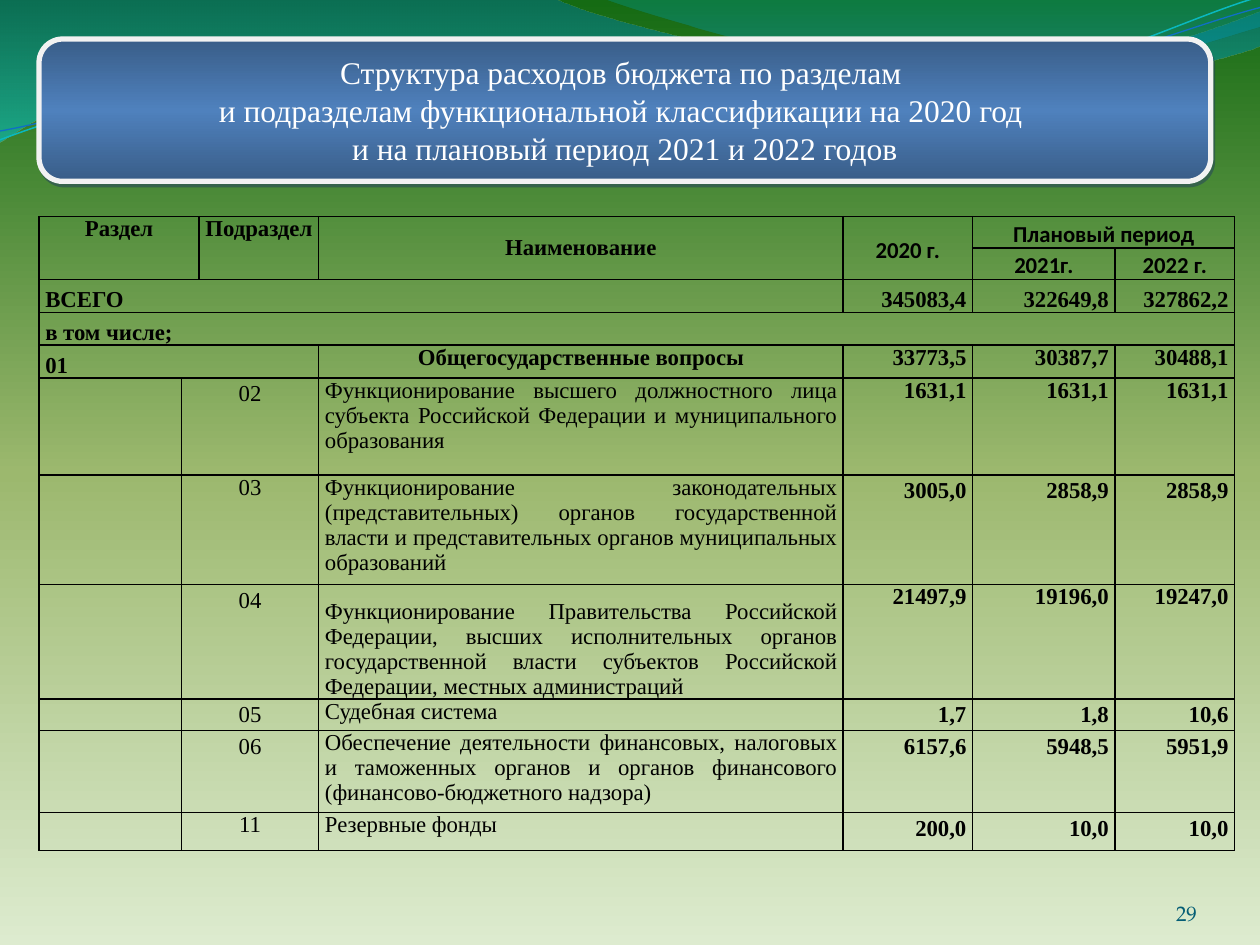
from lxml import etree
from pptx import Presentation
from pptx.dml.color import RGBColor
from pptx.enum.shapes import MSO_SHAPE
from pptx.enum.text import MSO_ANCHOR, PP_ALIGN
from pptx.oxml.ns import qn
from pptx.util import Inches, Pt

LEFT, CENTER, RIGHT, JUSTIFY = PP_ALIGN.LEFT, PP_ALIGN.CENTER, PP_ALIGN.RIGHT, PP_ALIGN.JUSTIFY
TOP, MIDDLE, BOTTOM = MSO_ANCHOR.TOP, MSO_ANCHOR.MIDDLE, MSO_ANCHOR.BOTTOM
PANEL = MSO_SHAPE.FLOWCHART_ALTERNATE_PROCESS
SERIF, SANS = "Times New Roman", "Calibri"

# Each wave: start point, then Bezier triples (six numbers) or line ends (two numbers)
BROAD_WAVE = [(0, -0.01), (4.4, -0.01), (4.76, 0.17, 6.64, 0.63, 7.58, 0.63),
              (8.53, 0.63, 9.58, 0.26, 10, 0.09), (10.01, 0.36),
              (9.83, 0.44, 8.7, 0.76, 7.46, 0.75), (6.22, 0.75, 3.82, 0.28, 2.57, 0.34),
              (1.29, 0.35, 0.46, 0.83, -0.01, 1.13), (0, -0.01)]
RIGHT_WAVE = [(4.79, -0.01), (5.09, 0.11, 6.82, 0.62, 7.69, 0.65),
              (8.56, 0.69, 9.61, 0.32, 10, 0.21), (10, 0), (4.79, -0.01)]
UPPER_LINE = [(0, 1.11), (0.48, 0.93, 1.58, 0.57, 2.77, 0.52),
              (3.95, 0.47, 5.93, 0.89, 7.13, 0.8), (8.33, 0.71, 9.38, 0.15, 9.98, -0.02)]
LOWER_LINE = [(0, 1.04), (0.47, 0.96, 1.64, 0.61, 2.83, 0.56),
              (4.03, 0.51, 5.97, 0.83, 7.17, 0.75), (8.36, 0.67, 9.41, 0.21, 10, 0.06)]

TITLE = ["Структура расходов бюджета по разделам ",
         "и подразделам функциональной классификации на 2020 год ",
         "и на плановый период 2021 и 2022 годов"]
COL_WIDTHS = [1.13, 0.11, 0.95, 4.16, 1.03, 1.13, 0.95]
ROW_HEIGHTS = [0.25, 0.25, 0.26, 0.26, 0.26, 0.77, 0.77, 0.91, 0.16, 0.56, 0.3]
MERGES = [(0, 0, 1, 1), (0, 2, 1, 2), (0, 3, 1, 3), (0, 4, 1, 4), (0, 5, 0, 6),
          (2, 0, 2, 3), (3, 0, 3, 6), (4, 0, 4, 2)] + [(r, 1, r, 2) for r in range(5, 11)]
# code, loose code, name, name alignment, name anchor, values, loose values
SUBSECTIONS = [
    ("02", True, "Функционирование высшего должностного лица субъекта Российской Федерации "
     "и муниципального образования", JUSTIFY, TOP, ("1631,1", "1631,1", "1631,1"), False),
    ("03", False, "Функционирование законодательных (представительных) органов государственной "
     "власти и представительных органов муниципальных образований",
     JUSTIFY, TOP, ("3005,0", "2858,9", "2858,9"), True),
    ("04", True, "Функционирование Правительства Российской Федерации, высших исполнительных "
     "органов государственной власти субъектов Российской Федерации, местных администраций",
     JUSTIFY, BOTTOM, ("21497,9", "19196,0", "19247,0"), False),
    ("05", True, "Судебная система", LEFT, TOP, ("1,7", "1,8", "10,6"), True),
    ("06", True, "Обеспечение деятельности финансовых, налоговых и таможенных органов и органов "
     "финансового (финансово-бюджетного надзора)",
     JUSTIFY, TOP, ("6157,6", "5948,5", "5951,9"), True),
    ("11", False, "Резервные фонды", JUSTIFY, TOP, ("200,0", "10,0", "10,0"), True),
]


def rgb(color):
    return RGBColor.from_string(color)


def set_gradient(fill, root, stops, angle):
    """Fill with (position, colour, {modifier: percent}) stops; the angle runs clockwise."""
    fill.gradient()
    grad = next(root.iter(qn("a:gradFill")))
    for child in list(grad):
        grad.remove(child)
    stop_list = etree.SubElement(grad, qn("a:gsLst"))
    for pos, color, modifiers in stops:
        gs = etree.SubElement(stop_list, qn("a:gs"), pos=str(pos * 1000))
        clr = etree.SubElement(gs, qn("a:srgbClr"), val=color)
        for name, percent in modifiers.items():
            etree.SubElement(clr, qn("a:" + name), val=str(int(percent * 1000)))
    etree.SubElement(grad, qn("a:lin"), ang=str(angle * 60000), scaled="0")


def format_runs(p, size, font, color, bold=False):
    for r in p.runs:
        r.font.size, r.font.name, r.font.bold = Pt(size), font, bold
        r.font.color.rgb = rgb(color)


def add_wave(slide, wave, closed):
    """Build an outline through all points, then join control points into curves."""
    points = [(Inches(seg[i]), Inches(seg[i + 1])) for seg in wave for i in range(0, len(seg), 2)]
    builder = slide.shapes.build_freeform(*points[0])
    builder.add_line_segments(points[1:], close=closed)
    sp = builder.convert_to_shape()
    sp.shadow.inherit = False
    lines = iter(list(sp.element.iter(qn("a:lnTo"))))
    for seg in wave[1:]:
        line = next(lines)
        if len(seg) == 6:
            line.addprevious(curve := etree.Element(qn("a:cubicBezTo")))
            for part in (line, next(lines), next(lines)):
                curve.append(part[0])
                part.getparent().remove(part)
    return sp


def add_backdrop(slide):
    set_gradient(slide.background.fill, slide.element,
                 [(0, "DDEBCF", {}), (50, "9CB86E", {}), (100, "156B13", {})], 270)
    for wave, stops in [
            (BROAD_WAVE, [(0, "0074A1", {"alpha": 45}), (100, "00C6CF", {"alpha": 55})]),
            (RIGHT_WAVE, [(0, "00A1A9", {"alpha": 30}), (80, "008BBF", {"alpha": 45})])]:
        sp = add_wave(slide, wave, True)
        set_gradient(sp.fill, sp.element, stops, 90)
        sp.line.fill.background()
    for wave, color, width in [(UPPER_LINE, "0AB8BF", 0.85), (LOWER_LINE, "0F6FC6", 0.75)]:
        sp = add_wave(slide, wave, False)
        sp.fill.background()
        sp.line.color.rgb, sp.line.width = rgb(color), Pt(width)


def add_title_panel(slide, left, top, width, height):
    sp = slide.shapes.add_shape(PANEL, left, top, width, height)
    dark = {"shade": 47.5}
    set_gradient(sp.fill, sp.element,
                 [(0, "4F81BD", dark), (50, "4F81BD", {}), (100, "4F81BD", dark)], 90)
    sp.line.color.rgb, sp.line.width = rgb("F2F2F2"), Pt(3)
    sp.shadow.inherit = False
    effects = next(sp.element.iter(qn("a:effectLst")))
    shadow = etree.SubElement(effects, qn("a:outerShdw"), blurRad="0", dist=str(Pt(2.2)),
                              dir=str(63 * 60000), algn="ctr", rotWithShape="0")
    clr = etree.SubElement(shadow, qn("a:srgbClr"), val="243F60")
    etree.SubElement(clr, qn("a:alpha"), val="50000")
    tf = sp.text_frame
    tf.text = "\n".join(TITLE)
    tf.word_wrap, tf.vertical_anchor = True, MIDDLE
    for p in tf.paragraphs:
        p.alignment = CENTER
        format_runs(p, 18, SERIF, "FFFFFF")


def style_cell(cell):
    """Clear the fill, draw thin black borders and keep empty text small."""
    cell.margin_left = cell.margin_right = Inches(0.05)
    cell.margin_top = cell.margin_bottom = 0
    cell.fill.background()
    props = cell._tc.get_or_add_tcPr()
    for i, side in enumerate(("lnL", "lnR", "lnT", "lnB")):
        ln = etree.Element(qn("a:" + side), w=str(Pt(1)))
        solid = etree.SubElement(ln, qn("a:solidFill"))
        etree.SubElement(solid, qn("a:srgbClr"), val="000000")
        props.insert(i, ln)
    p = cell.text_frame.paragraphs[0]
    if not p.runs:
        etree.SubElement(p._p, qn("a:endParaRPr"), sz="1300")


def write(cell, text, align=LEFT, anchor=TOP, loose=False, bold=True, font=SERIF):
    cell.text_frame.text = text
    cell.vertical_anchor = anchor
    p = cell.text_frame.paragraphs[0]
    p.alignment = align
    if loose:
        p.line_spacing, p.space_after = 1.15, Pt(10)
    format_runs(p, 13, font, "000000", bold)


def write_values(table, row, values, anchor=TOP, loose=False):
    for col, value in enumerate(values, 4):
        write(table.cell(row, col), value, RIGHT, anchor, loose)


def write_header(table):
    for col, text, anchor in [(0, "Раздел", TOP), (2, "Подраздел", TOP),
                              (3, "Наименование", MIDDLE)]:
        cell = table.cell(0, col)
        write(cell, text, CENTER, anchor)
        p = cell.text_frame.paragraphs[0]
        p.space_before, p.space_after = Pt(12), Pt(3)
    for row, col, text, anchor in [(0, 4, "2020 г.", MIDDLE), (0, 5, "Плановый период", TOP),
                                   (1, 5, "2021г.", TOP), (1, 6, "2022 г.", TOP)]:
        write(table.cell(row, col), text, CENTER, anchor, loose=True, font=SANS)


def add_budget_table(slide, left, top, width, height):
    table = slide.shapes.add_table(len(ROW_HEIGHTS), len(COL_WIDTHS),
                                   left, top, width, height).table
    table.first_row = table.horz_banding = False
    for column, size in zip(table.columns, COL_WIDTHS):
        column.width = Inches(size)
    for row, size in zip(table.rows, ROW_HEIGHTS):
        row.height = Inches(size)
    for r1, c1, r2, c2 in MERGES:
        table.cell(r1, c1).merge(table.cell(r2, c2))

    write_header(table)
    for row, text in enumerate(("ВСЕГО", "в том числе;", "01"), 2):
        write(table.cell(row, 0), text, anchor=BOTTOM)
    write_values(table, 2, ("345083,4", "322649,8", "327862,2"), BOTTOM)
    write(table.cell(4, 3), "Общегосударственные вопросы", CENTER)
    write_values(table, 4, ("33773,5", "30387,7", "30488,1"))
    for row, (code, loose_code, name, align, anchor, values, loose) in enumerate(SUBSECTIONS, 5):
        write(table.cell(row, 1), code, CENTER, loose=loose_code, bold=False)
        write(table.cell(row, 3), name, align, anchor, bold=False)
        write_values(table, row, values, loose=loose)
    for cell in table.iter_cells():
        style_cell(cell)


def add_page_number(slide, left, top, width, height):
    tf = slide.shapes.add_textbox(left, top, width, height).text_frame
    tf.text = "29"
    tf.word_wrap, tf.vertical_anchor = True, BOTTOM
    tf.margin_left = tf.margin_right = tf.margin_top = tf.margin_bottom = 0
    tf.paragraphs[0].alignment = RIGHT
    format_runs(tf.paragraphs[0], 12, "TeX Gyre Pagella", "045D75")


def main():
    prs = Presentation()
    prs.slide_width, prs.slide_height = Inches(10), Inches(7.5)
    slide = prs.slides.add_slide(prs.slide_layouts[6])
    add_backdrop(slide)
    add_page_number(slide, Inches(8.67), Inches(6.95), Inches(0.83), Inches(0.4))
    add_title_panel(slide, Inches(0.31), Inches(0.31), Inches(9.3), Inches(1.13))
    add_budget_table(slide, Inches(0.31), Inches(1.72), Inches(9.45), Inches(5.02))
    prs.save("out.pptx")


if __name__ == "__main__":
    main()
